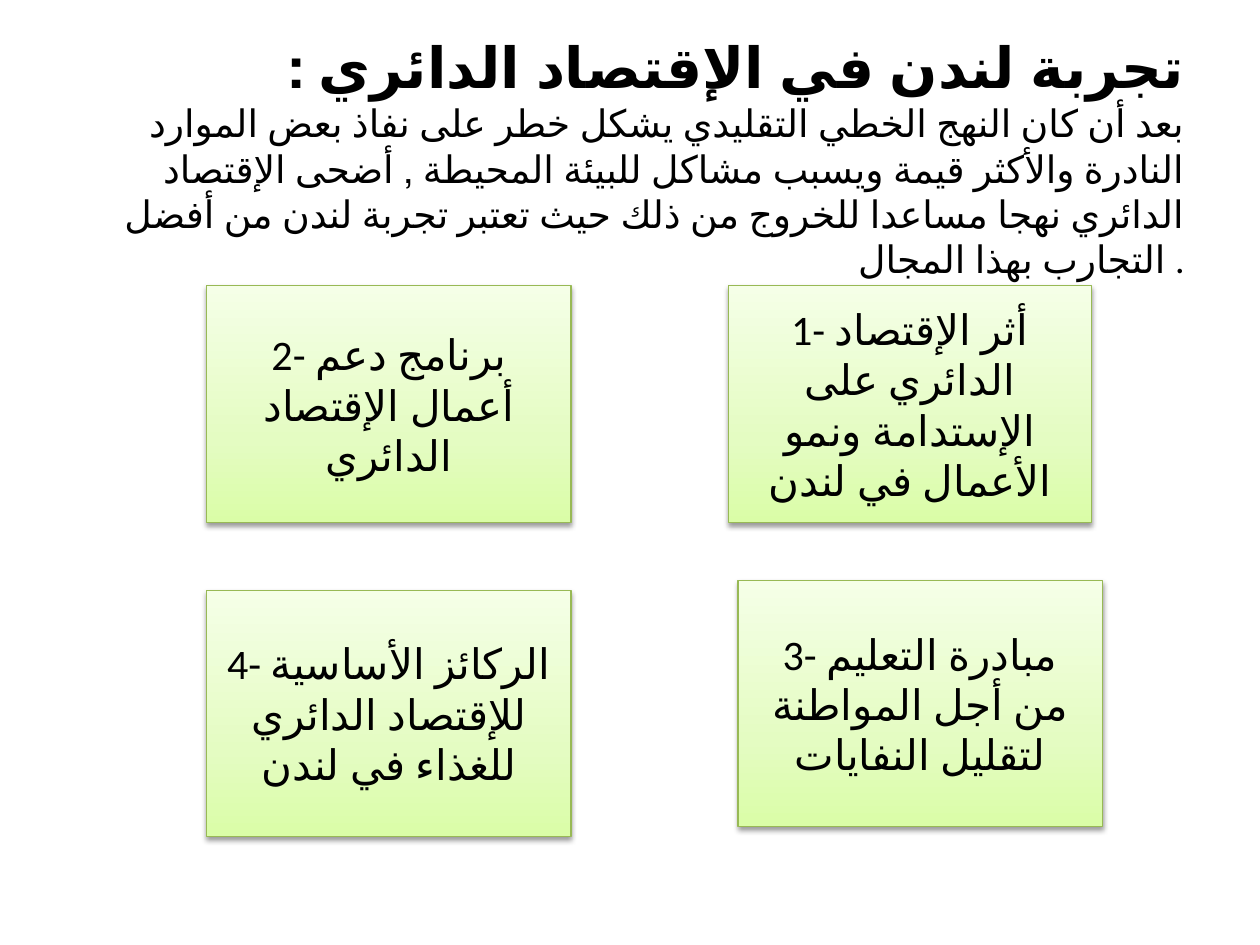
import dataclasses

import lxml.etree
import pptx
import pptx.dml.color
import pptx.dml.fill
import pptx.enum.lang
import pptx.enum.shapes
import pptx.enum.text
import pptx.oxml
import pptx.oxml.ns
import pptx.slide
import pptx.text.text
import pptx.util

Cm = pptx.util.Cm
Pt = pptx.util.Pt

FONT = "Calibri"
HUES = {
    "text": "000000",
    "line": "98B955",
    "low": "DAFDA7",
    "mid": "E4FCC2",
    "top": "F5FFE7",
    "shade": "000000",
}
STOPS = ((0, "low"), (35, "mid"), (100, "top"))
HEAD = " تجربة لندن في الإقتصاد الدائري :"
BODY = (
    "بعد أن كان النهج الخطي التقليدي يشكل خطر على نفاذ بعض الموارد النادرة "
    "والأكثر قيمة ويسبب مشاكل للبيئة المحيطة , أضحى الإقتصاد الدائري نهجا "
    "مساعدا للخروج من ذلك حيث تعتبر تجربة لندن من أفضل التجارب بهذا المجال ."
)


@dataclasses.dataclass(frozen=True)
class Card:
    text: str
    left: float
    top: float
    height: float
    width: float = 7.34


CARDS = (
    Card("1- أثر الإقتصاد الدائري على الإستدامة ونمو الأعمال في لندن", 14.68, 5.76, 4.78, 7.32),
    Card("2- برنامج دعم أعمال الإقتصاد الدائري", 4.17, 5.76, 4.78),
    Card("3- مبادرة التعليم من أجل المواطنة لتقليل النفايات", 14.88, 11.71, 4.95),
    Card("4- الركائز الأساسية للإقتصاد الدائري للغذاء في لندن", 4.17, 11.91, 4.95),
)


def hue(name: str) -> pptx.dml.color.RGBColor:
    return pptx.dml.color.RGBColor.from_string(HUES[name])


def style(font: pptx.text.text.Font, size: float, bold: bool = False) -> None:
    font.name = FONT
    font.size = Pt(size)
    font.bold = bold
    font.color.rgb = hue("text")


def speak(run: pptx.text.text._Run) -> None:
    run.font.language_id = pptx.enum.lang.MSO_LANGUAGE_ID.ARABIC_ALGERIA


def add_title(slide: pptx.slide.Slide) -> None:
    box = slide.shapes.add_textbox(Cm(1.27), Cm(0.76), Cm(22.86), Cm(4.8))
    frame = box.text_frame
    frame.word_wrap = True
    frame.vertical_anchor = pptx.enum.text.MSO_ANCHOR.MIDDLE
    para = frame.paragraphs[0]
    para.alignment = pptx.enum.text.PP_ALIGN.RIGHT
    head = para.add_run()
    head.text = HEAD
    style(head.font, 32.4, True)
    para.add_line_break()
    body = para.add_run()
    body.text = BODY
    style(body.font, 21.6)
    for run in para.runs:
        speak(run)


def add_card(slide: pptx.slide.Slide, card: Card) -> None:
    shape = slide.shapes.add_shape(
        pptx.enum.shapes.MSO_SHAPE.RECTANGLE,
        Cm(card.left), Cm(card.top), Cm(card.width), Cm(card.height),
    )
    shape.line.color.rgb = hue("line")
    shape.line.width = Pt(0.75)
    shape.shadow.inherit = False
    paint(shape.fill, shape._element.spPr)
    frame = shape.text_frame
    frame.word_wrap = True
    frame.vertical_anchor = pptx.enum.text.MSO_ANCHOR.MIDDLE
    para = frame.paragraphs[0]
    para.text = card.text
    para.alignment = pptx.enum.text.PP_ALIGN.CENTER
    style(para.font, 24)
    speak(para.runs[0])


def paint(fill: pptx.dml.fill.FillFormat, props: lxml.etree._Element) -> None:
    fill.gradient()
    fill.gradient_angle = 90
    qn = pptx.oxml.ns.qn
    space = pptx.oxml.ns.nsdecls("a")
    stops = props.find(f"{qn('a:gradFill')}/{qn('a:gsLst')}")
    for stop in list(stops):
        stops.remove(stop)
    for spot, name in STOPS:
        stops.append(pptx.oxml.parse_xml(
            f'<a:gs {space} pos="{spot * 1000}"><a:srgbClr val="{HUES[name]}"/></a:gs>'
        ))
    props.find(qn("a:effectLst")).append(pptx.oxml.parse_xml(
        f'<a:outerShdw {space} blurRad="{Pt(3.1)}" dist="{Pt(1.6)}" dir="5400000" '
        f'rotWithShape="0"><a:srgbClr val="{HUES["shade"]}"><a:alpha val="38000"/>'
        "</a:srgbClr></a:outerShdw>"
    ))


def main() -> None:
    """Build the slide on London's circular economy."""
    deck = pptx.Presentation()
    deck.slide_width = Cm(25.4)
    deck.slide_height = Cm(19.05)
    slide = deck.slides.add_slide(deck.slide_layouts[6])
    add_title(slide)
    for card in CARDS:
        add_card(slide, card)
    deck.save("out.pptx")


if __name__ == "__main__":
    main()
